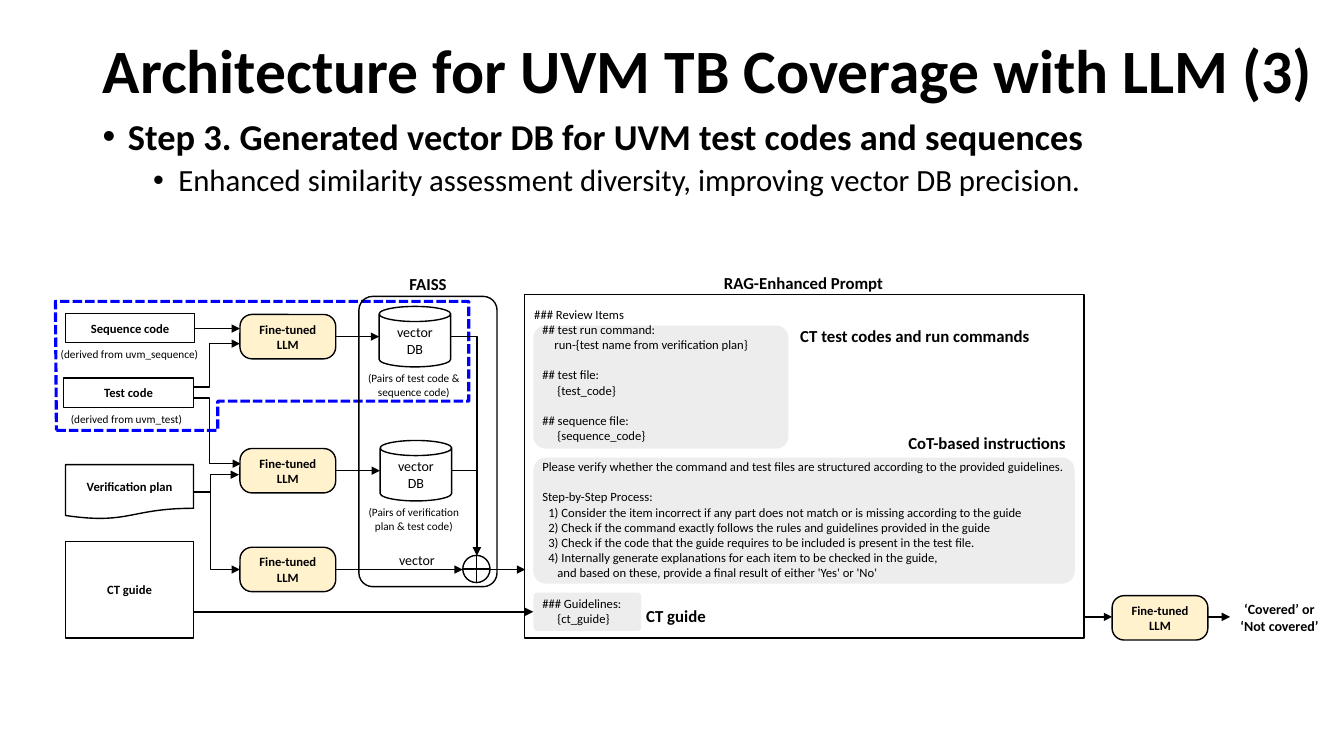
from dataclasses import dataclass

from lxml import etree
from pptx import Presentation
from pptx import util as u
from pptx.dml.color import RGBColor
from pptx.enum import dml, shapes, text
from pptx.oxml.ns import qn


@dataclass(frozen=True)
class Theme:
    font: str = "Calibri"
    ink: RGBColor = RGBColor(0, 0, 0)
    paper: RGBColor = RGBColor(255, 255, 255)
    panel: RGBColor = RGBColor(0xED, 0xED, 0xED)
    model: RGBColor = RGBColor(0xFF, 0xF2, 0xCC)
    focus: RGBColor = RGBColor(0, 0, 255)
    title: int = 44
    step: int = 26
    detail: int = 22
    heading: int = 12
    label: int = 10
    node: int = 9
    caption: int = 8


theme = Theme()
kinds = shapes.MSO_SHAPE
left, center = text.PP_ALIGN.LEFT, text.PP_ALIGN.CENTER
middle, top = text.MSO_ANCHOR.MIDDLE, text.MSO_ANCHOR.TOP

prs = Presentation()
prs.slide_width, prs.slide_height = u.Inches(13.33), u.Inches(7.5)
s = prs.slides.add_slide(prs.slide_layouts[5])


def put(words, at, sp=None, kind=None, fill=None, line=True, adj=None,
        size=theme.node, bold=False, align=center, anchor=middle):
    """Place text in a given shape, a new preset shape, or a text box."""
    box = [u.Inches(v) for v in at]
    if sp is not None:
        sp.left, sp.top, sp.width, sp.height = box
    elif kind is None:
        sp = s.shapes.add_textbox(*box)
    else:
        sp = s.shapes.add_shape(kind, *box)
        sp.shadow.inherit = False
        if adj is not None:
            sp.adjustments[0] = adj
        if fill is None:
            sp.fill.background()
        else:
            sp.fill.solid()
            sp.fill.fore_color.rgb = fill
        if line:
            sp.line.color.rgb = theme.ink
            sp.line.width = u.Pt(1)
        else:
            sp.line.fill.background()
    tf = sp.text_frame
    tf.text = words
    tf.word_wrap = True
    tf.auto_size = text.MSO_AUTO_SIZE.NONE
    tf.vertical_anchor = anchor
    for p in tf.paragraphs:
        p.alignment = align
        for r in p.runs:
            r.font.name, r.font.size, r.font.bold = theme.font, u.Pt(size), bold
            r.font.color.rgb = theme.ink
    return sp


def arrow(x1, y1, x2, y2, bend=None, corner=False):
    """Arrow: straight, with a bend at a share of its width, or one corner."""
    straight = bend is None and not corner
    kind = shapes.MSO_CONNECTOR.STRAIGHT if straight else shapes.MSO_CONNECTOR.ELBOW
    cxn = s.shapes.add_connector(kind, *[u.Inches(v) for v in (x1, y1, x2, y2)])
    cxn.line.color.rgb = theme.ink
    cxn.line.width = u.Pt(1)
    props = cxn.element.spPr
    etree.SubElement(props.find(qn("a:ln")), qn("a:tailEnd"), type="triangle")
    etree.SubElement(props, qn("a:effectLst"))
    geom = props.find(qn("a:prstGeom"))
    if corner:
        geom.set("prst", "bentConnector2")
    elif bend is not None:
        guides = geom.find(qn("a:avLst"))
        if guides is None:
            guides = etree.SubElement(geom, qn("a:avLst"))
        etree.SubElement(guides, qn("a:gd"), name="adj1", fmla=f"val {round(bend * 100000)}")


# Title and bullets
put("Architecture for UVM TB Coverage with LLM (3)", (0.92, 0, 13.62, 1.45),
    sp=s.shapes.title, size=theme.title, bold=True, align=left)
s.shapes.title.text_frame.paragraphs[0].line_spacing = 0.9

bullets = put("Step 3. Generated vector DB for UVM test codes and sequences\n"
              "Enhanced similarity assessment diversity, improving vector DB precision.",
              (0.92, 1.13, 12.42, 1.2), align=left, anchor=top)
bullet_styles = [(0.25, theme.step, True, 0), (0.75, theme.detail, False, 5)]
for level, (p, (indent, size, bold, before)) in enumerate(
        zip(bullets.text_frame.paragraphs, bullet_styles)):
    pPr = p._p.get_or_add_pPr()
    pPr.set("marL", str(u.Inches(indent)))
    pPr.set("indent", str(u.Inches(-0.25)))
    etree.SubElement(pPr, qn("a:buFont"), typeface="Arial")
    etree.SubElement(pPr, qn("a:buChar"), char="•")
    p.level = level
    p.line_spacing = 0.9
    p.space_before = u.Pt(before)
    p.runs[0].font.size, p.runs[0].font.bold = u.Pt(size), bold

# Dashed outline around the new inputs
outline = [(0.56, 4.27), (2.16, 4.27), (2.16, 3.98), (4.65, 3.98), (4.65, 2.99), (0.55, 2.99)]
points = [(u.Inches(x), u.Inches(y)) for x, y in outline]
builder = s.shapes.build_freeform(*points[0], scale=1.0)
builder.add_line_segments(points[1:], close=True)
focus = builder.convert_to_shape()
focus.shadow.inherit = False
focus.fill.background()
focus.line.color.rgb = theme.focus
focus.line.width = u.Pt(2.25)
focus.line.dash_style = dml.MSO_LINE.SQUARE_DOT

# Prompt panels behind the prompt text
for y, w, h in [(4.54, 5.37, 1.25), (5.88, 1.07, 0.38), (3.23, 2.53, 1.22)]:
    put("", (5.29, y, w, h), kind=kinds.ROUNDED_RECTANGLE, fill=theme.panel, line=False, adj=0.1)

# Prompt text: indent in inches, whether a gap precedes, wording
prompt_lines = [
    (0, False, "### Review Items"),
    (0.08, False, "## test run command:"),
    (0.2, False, "run-{test name from verification plan}"),
    (0.08, True, "## test file:"),
    (0.23, False, "{test_code}"),
    (0.08, True, "## sequence file:"),
    (0.23, False, "{sequence_code}"),
    (0.08, True, "Please verify whether the command and test files are structured "
                 "according to the provided guidelines."),
    (0.08, True, "Step-by-Step Process:"),
    (0.14, False, "1) Consider the item incorrect if any part does not match or is "
                  "missing according to the guide"),
    (0.14, False, "2) Check if the command exactly follows the rules and guidelines "
                  "provided in the guide"),
    (0.14, False, "3) Check if the code that the guide requires to be included is "
                  "present in the test file."),
    (0.14, False, "4) Internally generate explanations for each item to be checked in the guide,"),
    (0.23, False, "and based on these, provide a final result of either 'Yes' or 'No'"),
    (0.08, True, "### Guidelines:"),
    (0.23, False, "{ct_guide}"),
]
prompt = put("\n".join(words for _, _, words in prompt_lines), (5.2, 2.92, 5.55, 3.41),
             kind=kinds.RECTANGLE, align=left)
for p, (indent, gap, _) in zip(prompt.text_frame.paragraphs, prompt_lines):
    p._p.get_or_add_pPr().set("marL", str(u.Inches(indent)))
    p.space_before = u.Pt(11 if gap else 0)

# Vector store frame, databases and junction
put("", (3.56, 2.94, 1.37, 2.88), kind=kinds.ROUNDED_RECTANGLE, adj=0.1)
put("", (4.59, 5.51, 0.27, 0.27), kind=kinds.FLOWCHART_OR)
for x, y in [(3.76, 3.04), (3.77, 4.37)]:
    put("vector DB", (x, y, 0.71, 0.6), kind=kinds.CAN, size=theme.label)

# Inputs
for words, at, kind in [
    ("Sequence code", (0.65, 3.11, 1.28, 0.29), kinds.RECTANGLE),
    ("Test code", (0.63, 3.75, 1.29, 0.29), kinds.RECTANGLE),
    ("Verification plan", (0.65, 4.61, 1.27, 0.54), kinds.FLOWCHART_DOCUMENT),
    ("CT guide", (0.65, 5.37, 1.27, 0.96), kinds.RECTANGLE),
]:
    put(words, at, kind=kind, fill=theme.paper, bold=True)

# Arrows
for ends in [(1.93, 3.26, 2.38, 3.26), (3.33, 3.34, 3.76, 3.34), (3.33, 4.67, 3.77, 4.67),
             (3.33, 5.65, 4.59, 5.65), (4.86, 5.65, 5.21, 5.65), (1.92, 6.07, 5.29, 6.07),
             (10.74, 6.12, 11.03, 6.12), (11.98, 6.12, 12.2, 6.12)]:
    arrow(*ends)
for x1, y1, x2, y2, turn in [(1.92, 3.84, 2.38, 3.41, 2.08), (1.92, 3.95, 2.39, 4.6, 2.08),
                             (1.92, 4.88, 2.37, 4.71, 2.09), (1.92, 4.88, 2.38, 5.65, 2.09)]:
    arrow(x1, y1, x2, y2, bend=(turn - x1) / (x2 - x1))
for y in (3.34, 4.67):
    arrow(4.47, y, 4.73, 5.51, corner=True)

# Models
for x, y in [(2.38, 3.12), (2.38, 4.45), (2.38, 5.43), (11.03, 5.91)]:
    put("Fine-tuned LLM", (x, y, 0.95, 0.44), kind=kinds.ROUNDED_RECTANGLE,
        fill=theme.model, adj=0.27, bold=True)

# Headings, labels and captions
for words, at, size, bold in [
    ("FAISS", (3.82, 2.68, 0.85, 0.27), theme.heading, True),
    ("RAG-Enhanced Prompt", (6.85, 2.67, 2.24, 0.27), theme.heading, True),
    ("CT test codes and run commands", (7.75, 3.2, 2.65, 0.27), theme.heading, True),
    ("CoT-based instructions", (8.73, 4.26, 2.12, 0.27), theme.heading, True),
    ("CT guide", (5.95, 5.97, 1.51, 0.27), theme.heading, True),
    ("‘Covered’ or\n‘Not covered’", (11.81, 5.82, 1.76, 0.61), theme.label, True),
    ("vector", (3.71, 5.42, 0.85, 0.27), theme.label, False),
    ("(derived from uvm_sequence)", (0.45, 3.4, 1.67, 0.23), theme.caption, False),
    ("(derived from uvm_test)", (0.46, 4.04, 1.59, 0.23), theme.caption, False),
    ("(Pairs of test code & sequence code)", (3.52, 3.54, 1.17, 0.56), theme.caption, False),
    ("(Pairs of verification plan & test code)", (3.45, 4.87, 1.31, 0.56), theme.caption, False),
]:
    put(words, at, size=size, bold=bold)

prs.save("out.pptx")
